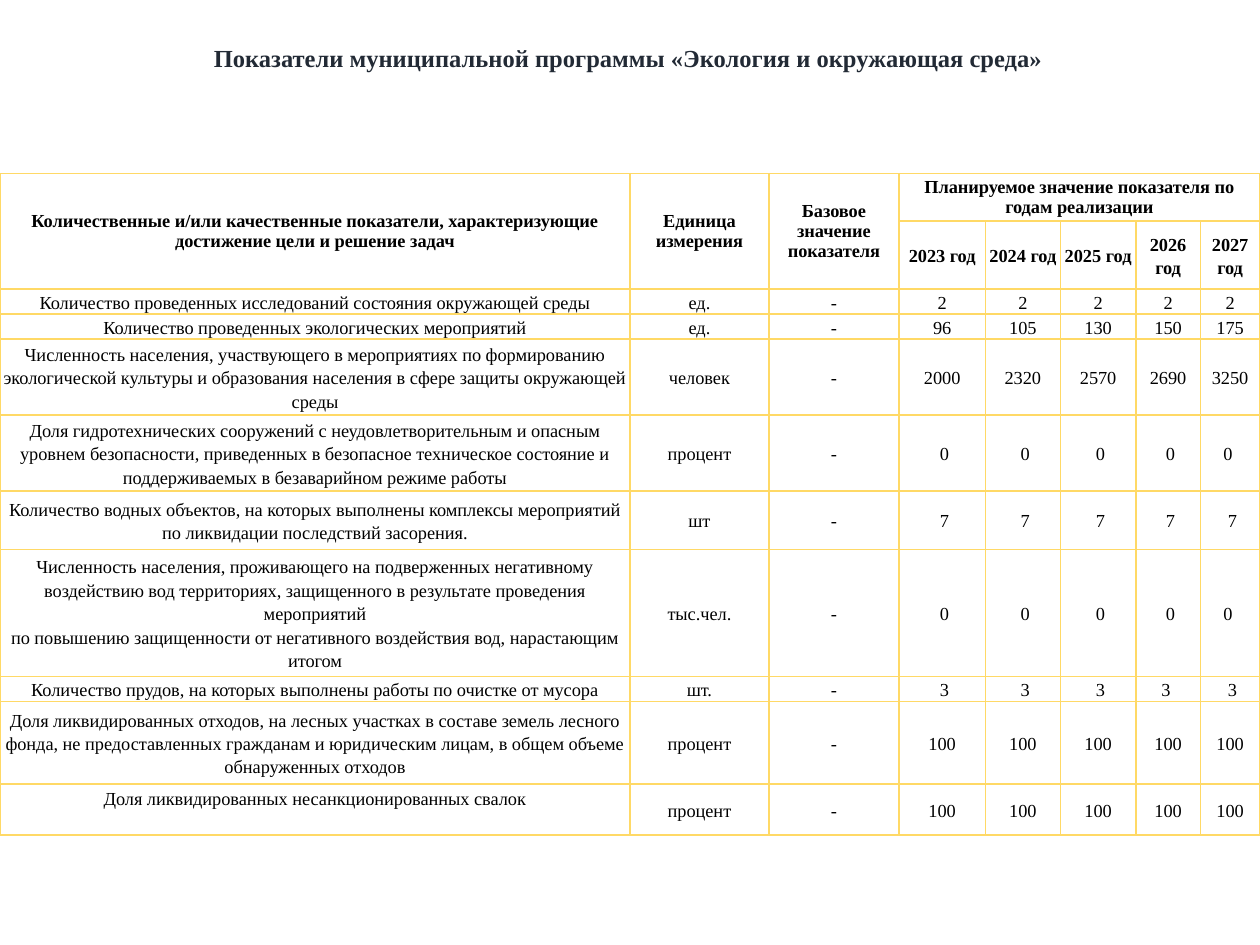
"""Builds the slide with the indicators of an ecology programme."""
from lxml.etree import SubElement
from pptx import Presentation
from pptx.dml.color import RGBColor
from pptx.enum.text import MSO_ANCHOR as Anchor, PP_ALIGN as Align
from pptx.oxml.ns import qn
from pptx.util import Pt

COLORS = {"title": "222A35", "text": "000000", "border": "FFD966"}
COLUMN_WIDTHS = [360, 79.4, 74.3, 49.4, 42.9, 43.1, 36.9, 34]
ROW_HEIGHTS = [27.2, 38.7, 14.4, 14.3, 43.4, 43.4, 33.4, 72.7, 14.3, 47.1, 29]
HEADINGS = [
    "Количественные и/или качественные показатели, характеризующие достижение цели и решение задач",
    "Единица измерения",
    "Базовое значение показателя",
]
PLAN_HEADING = "Планируемое значение показателя по годам реализации"
YEARS = range(2023, 2028)
INDICATORS = [
    ("Количество проведенных исследований состояния окружающей среды",
     "ед.", ["2"] * 5),
    ("Количество проведенных экологических мероприятий",
     "ед.", ["96", "105", "130", "150", "175"]),
    ("Численность населения, участвующего в мероприятиях по формированию экологической "
     "культуры и образования населения в сфере защиты окружающей среды",
     "человек", ["2000", "2320", "2570", "2690", "3250"]),
    ("Доля гидротехнических сооружений с неудовлетворительным и опасным уровнем "
     "безопасности, приведенных в безопасное техническое состояние и поддерживаемых "
     "в безаварийном режиме работы",
     "процент", [" 0"] * 4 + ["0 "]),
    ("Количество водных объектов, на которых выполнены комплексы мероприятий "
     "по ликвидации последствий засорения.",
     "шт", [" 7"] * 5),
    ("Численность населения, проживающего на подверженных негативному воздействию вод "
     "территориях, защищенного в результате проведения мероприятий\n"
     "по повышению защищенности от негативного воздействия вод, нарастающим итогом",
     "тыс.чел.", [" 0"] * 4 + ["0 "]),
    ("Количество прудов, на которых выполнены работы по очистке от мусора",
     "шт.", [" 3"] * 3 + ["3 ", " 3"]),
    ("Доля ликвидированных отходов, на лесных участках в составе земель лесного фонда, "
     "не предоставленных гражданам и юридическим лицам, в общем объеме обнаруженных отходов",
     "процент", ["100"] * 5),
    ("Доля ликвидированных несанкционированных свалок",
     "процент", ["100"] * 5),
]


class SlideBuilder:
    """Holds the text style and the current slide."""

    font_name = "Times New Roman"
    title_size = 14
    table_size = 10.5
    border_width = 1

    def __init__(self, slide):
        """Takes the slide to fill."""
        self.slide = slide

    def add_run(self, paragraph, text, size, color, bold):
        """Adds one centred, formatted run."""
        paragraph.alignment = Align.CENTER
        run = paragraph.add_run()
        run.text = text
        run.font.name = self.font_name
        run.font.size = Pt(size)
        run.font.bold = bold
        run.font.color.rgb = RGBColor.from_string(COLORS[color])

    def add_title(self, text, left, top, width, height):
        """Places and fills the title placeholder."""
        title = self.slide.shapes.title
        title.left, title.top, title.width, title.height = map(Pt, (left, top, width, height))
        frame = title.text_frame
        frame.word_wrap = True
        frame.vertical_anchor = Anchor.MIDDLE
        self.add_run(frame.paragraphs[0], text, self.title_size, "title", True)

    def add_table(self, left, top, widths, heights):
        """Adds an unfilled table with borders around every cell."""
        frame = self.slide.shapes.add_table(
            len(heights), len(widths), Pt(left), Pt(top), Pt(sum(widths)), Pt(sum(heights)))
        table = frame.table
        table.first_row = table.horz_banding = False
        for column, width in zip(table.columns, widths):
            column.width = Pt(width)
        for row, height in zip(table.rows, heights):
            row.height = Pt(height)
        for cell in table.iter_cells():
            self.add_borders(cell)
            cell.fill.background()
        return table

    def add_borders(self, cell):
        """Draws the four sides of a cell."""
        properties = cell._tc.get_or_add_tcPr()
        for side in ("a:lnL", "a:lnR", "a:lnT", "a:lnB"):
            line = SubElement(properties, qn(side), w=str(Pt(self.border_width)))
            fill = SubElement(line, qn("a:solidFill"))
            SubElement(fill, qn("a:srgbClr"), val=COLORS["border"])

    def fill_cell(self, cell, text, bold=False, spacing=1.15, inset=1.44, bottom=0):
        """Writes one paragraph per line of text into a cell."""
        cell.vertical_anchor = Anchor.MIDDLE
        cell.margin_left = cell.margin_right = Pt(inset)
        cell.margin_top, cell.margin_bottom = Pt(0), Pt(bottom)
        frame = cell.text_frame
        for index, line in enumerate(text.split("\n")):
            paragraph = frame.add_paragraph() if index else frame.paragraphs[0]
            paragraph.line_spacing = spacing
            self.add_run(paragraph, line, self.table_size, "text", bold)


def main():
    """Builds and saves the presentation."""
    deck = Presentation()
    deck.slide_width, deck.slide_height = Pt(720), Pt(540)
    builder = SlideBuilder(deck.slides.add_slide(deck.slide_layouts[5]))
    builder.add_title("Показатели муниципальной программы «Экология и окружающая среда»",
                      13, 21, 692, 24.5)

    table = builder.add_table(0, 99.2, COLUMN_WIDTHS, ROW_HEIGHTS)
    for column, heading in enumerate(HEADINGS):
        table.cell(0, column).merge(table.cell(1, column))
        builder.fill_cell(table.cell(0, column), heading, bold=True, spacing=1.0, inset=0.72)
    first_year = len(HEADINGS)
    table.cell(0, first_year).merge(table.cell(0, len(COLUMN_WIDTHS) - 1))
    builder.fill_cell(table.cell(0, first_year), PLAN_HEADING, bold=True, spacing=1.0)
    for column, year in enumerate(YEARS, first_year):
        builder.fill_cell(table.cell(1, column), f"{year} год", bold=True)

    for row, (indicator, unit, values) in enumerate(INDICATORS, 2):
        for column, text in enumerate([indicator, unit, "-", *values]):
            raised = column == 0 and row == len(ROW_HEIGHTS) - 1
            builder.fill_cell(table.cell(row, column), text, bottom=13.5 if raised else 0)

    deck.save("out.pptx")


if __name__ == "__main__":
    main()
